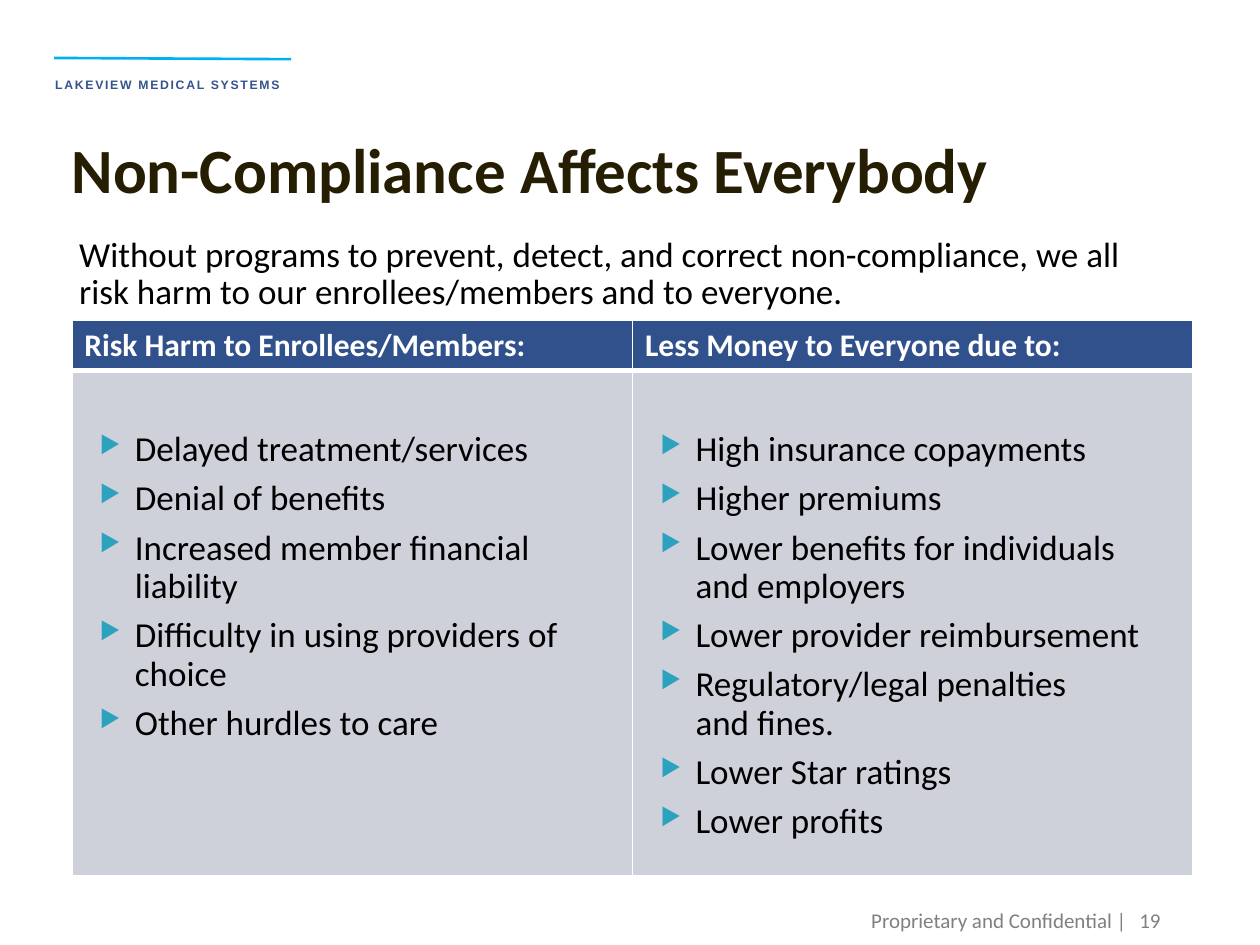
from dataclasses import dataclass

from lxml.etree import SubElement
from pptx import Presentation
from pptx.dml.color import RGBColor as RGB
from pptx.enum.shapes import MSO_CONNECTOR as Link
from pptx.enum.text import MSO_ANCHOR as Anchor, PP_ALIGN as Align
from pptx.oxml.ns import qn
from pptx.util import Inches, Pt


@dataclass(frozen=True)
class Theme:
    font: str = "Calibri"
    brand_font: str = "Arial"
    brand: str = "35538D"
    rule: str = "00B0F0"
    title: str = "261E03"
    text: str = "000000"
    muted: str = "808080"
    head: str = "31518C"
    body: str = "CED0DA"
    white: str = "FFFFFF"
    bullet: str = "2DA2BF"
    brand_size: int = 7
    foot_size: int = 12
    head_size: int = 18
    text_size: int = 20
    title_size: int = 36


THEME = Theme()

LISTS = {
    "Risk Harm to Enrollees/Members:": [
        "Delayed treatment/services",
        "Denial of benefits",
        "Increased member financial liability",
        "Difficulty in using providers of choice",
        "Other hurdles to care",
    ],
    "Less Money to Everyone due to:": [
        "High insurance copayments",
        "Higher premiums",
        "Lower benefits for individuals\vand employers",
        "Lower provider reimbursement",
        "Regulatory/legal penalties \vand fines.",
        "Lower Star ratings",
        "Lower profits",
    ],
}


def style(para, size, color, bold=False, font=THEME.font):
    for run in para.runs:
        face = run.font
        face.name, face.size, face.bold = font, Pt(size), bold
        face.color.rgb = RGB.from_string(color)


def add_text(slide, box, text, size, color, bold=False, font=THEME.font):
    shape = slide.shapes.add_textbox(*map(Inches, box))
    frame = shape.text_frame
    frame.word_wrap = True
    frame.text = text
    para = frame.paragraphs[0]
    style(para, size, color, bold, font)
    return frame, para


def add_brand(slide):
    frame, para = add_text(slide, (0.34, 0.46, 2.04, 0.29),
                           "LAKEVIEW MEDICAL SYSTEMS", THEME.brand_size,
                           THEME.brand, True, THEME.brand_font)
    frame.word_wrap = False
    para.line_spacing = Pt(16)
    para.runs[0].font._element.set("spc", "100")

    ends = map(Inches, (0.43, 0.46, 2.31, 0.47))
    rule = slide.shapes.add_connector(Link.STRAIGHT, *ends)
    rule.line.color.rgb = RGB.from_string(THEME.rule)
    rule.line.width = Pt(1.5)
    SubElement(rule._element.spPr, qn("a:effectLst"))


def add_foot(slide, box, text):
    frame, para = add_text(slide, box, text, THEME.foot_size, THEME.muted)
    frame.vertical_anchor = Anchor.MIDDLE
    para.alignment = Align.RIGHT


def add_color(parent, color):
    SubElement(parent, qn("a:srgbClr")).set("val", color)


def set_edges(cell, **widths):
    """Draw white cell borders; widths in points by side."""
    props = cell._tc.get_or_add_tcPr()
    for spot, side in enumerate("LRTB"):
        edge = SubElement(props, qn(f"a:ln{side}"))
        edge.set("w", str(Pt(widths.get(side, 1))))
        add_color(SubElement(edge, qn("a:solidFill")), THEME.white)
        props.insert(spot, edge)  # borders precede the fill


def set_fill(cell, color):
    cell.fill.solid()
    cell.fill.fore_color.rgb = RGB.from_string(color)


def set_bullet(para):
    props = para._p.get_or_add_pPr()
    props.set("marL", str(Inches(0.4)))
    props.set("indent", str(Inches(-0.28)))
    add_color(SubElement(props, qn("a:buClr")), THEME.bullet)
    SubElement(props, qn("a:buSzPct")).set("val", "68000")
    SubElement(props, qn("a:buChar")).set("char", "▶")


def fill_list(cell, items):
    frame = cell.text_frame
    for spot, item in enumerate(items):
        para = frame.add_paragraph() if spot else frame.paragraphs[0]
        para.text = item
        set_bullet(para)
        para.line_spacing = 0.9
        if spot:
            para.space_before = Pt(6)
        style(para, THEME.text_size, THEME.text)


def add_grid(slide):
    box = map(Inches, (0.57, 2.54, 8.9, 4.41))
    table = slide.shapes.add_table(2, len(LISTS), *box).table
    table.rows[0].height = Inches(0.4)
    table.rows[1].height = Inches(4.01)
    for col, (title, items) in enumerate(LISTS.items()):
        table.columns[col].width = Inches(4.45)
        head, body = table.cell(0, col), table.cell(1, col)

        head.text_frame.text = title
        style(head.text_frame.paragraphs[0], THEME.head_size, THEME.white, True)
        set_fill(head, THEME.head)
        set_edges(head, B=3)

        body.margin_top = Inches(0.48)
        fill_list(body, items)
        set_fill(body, THEME.body)
        set_edges(body, T=3)


def main():
    deck = Presentation()
    deck.slide_width, deck.slide_height = Inches(10), Inches(7.5)
    slide = deck.slides.add_slide(deck.slide_layouts[6])

    # Header
    add_brand(slide)
    add_text(slide, (0.47, 0.99, 9, 0.71), "Non-Compliance Affects Everybody",
             THEME.title_size, THEME.title, True)

    # Content
    add_grid(slide)
    intro = add_text(
        slide, (0.53, 1.83, 8.78, 0.71),
        "Without programs to prevent, detect, and correct non-compliance, "
        "we all risk harm to our enrollees/members and to everyone.",
        THEME.text_size, THEME.text)[1]
    intro.line_spacing = 0.9

    # Footer
    add_foot(slide, (5.66, 7.1, 3.38, 0.4), "Proprietary and Confidential |")
    add_foot(slide, (8.85, 7.1, 0.46, 0.4), "19")

    deck.save("out.pptx")


if __name__ == "__main__":
    main()
